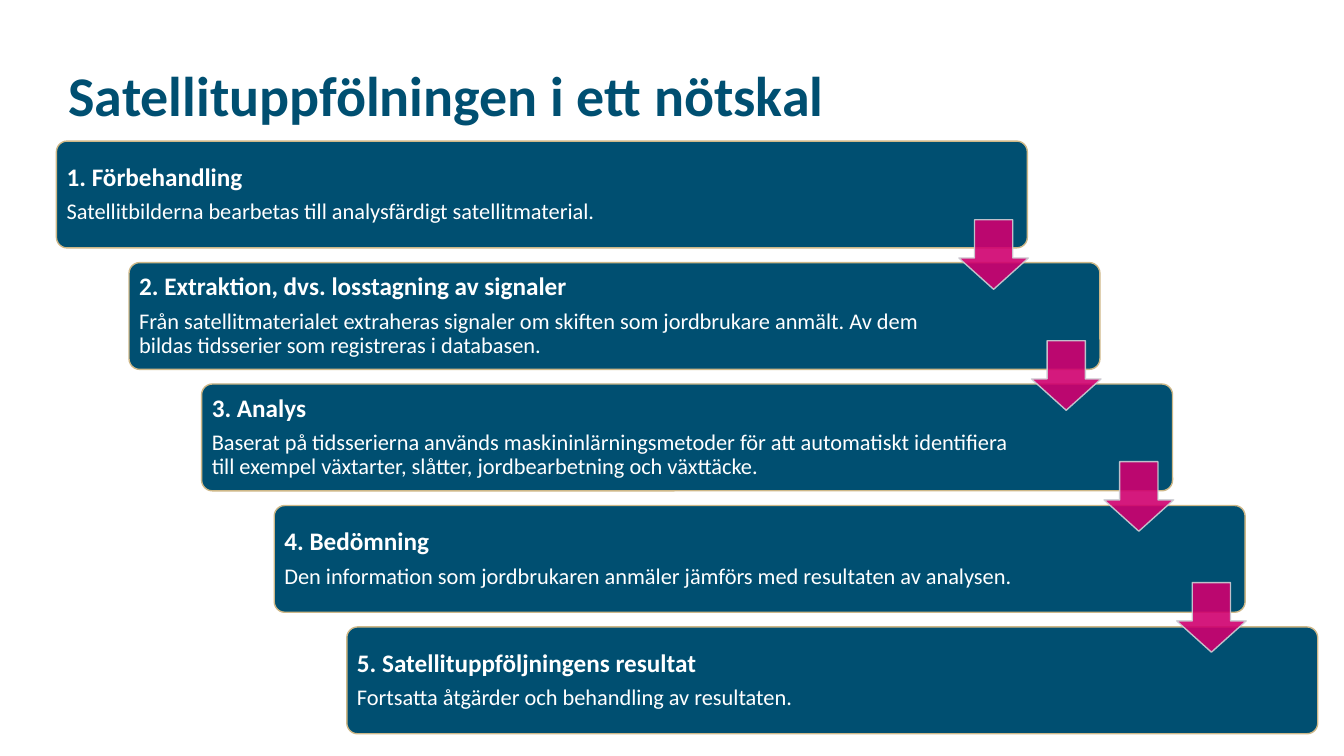
"""Build the slide with the five descending steps of satellite monitoring."""
import pptx
import pptx.dml.color
import pptx.enum.shapes
import pptx.enum.text
import pptx.oxml.ns
import pptx.util
from lxml import etree

EMU_PER_PX = 9144
FONT = "Calibri"
TEAL = pptx.dml.color.RGBColor(0x00, 0x4F, 0x71)
GOLD = pptx.dml.color.RGBColor(0xCE, 0xB8, 0x88)
MAGENTA = pptx.dml.color.RGBColor(0xD0, 0x00, 0x6F)
SILVER = pptx.dml.color.RGBColor(0xCC, 0xD0, 0xD5)
WHITE = pptx.dml.color.RGBColor(0xFF, 0xFF, 0xFF)

STEP_LEFT, STEP_TOP, STEP_WIDTH, STEP_HEIGHT = 56, 140, 963, 106
ARROW_LEFT, ARROW_TOP, ARROW_SIZE = 951, 218, 69
SHIFT_RIGHT = 72
STEP_PITCH, ARROW_PITCH = 120.5, 120

STEPS = [
    ("1. Förbehandling",
     "Satellitbilderna bearbetas till analysfärdigt satellitmaterial."),
    ("2. Extraktion, dvs. losstagning av signaler",
     "Från satellitmaterialet extraheras signaler om skiften som jordbrukare anmält. "
     "Av dem bildas tidsserier som registreras i databasen."),
    ("3. Analys",
     "Baserat på tidsserierna används maskininlärningsmetoder för att automatiskt "
     "identifiera till exempel växtarter, slåtter, jordbearbetning och växttäcke."),
    ("4. Bedömning",
     "Den information som jordbrukaren anmäler jämförs med resultaten av analysen."),
    ("5. Satellituppföljningens resultat",
     "Fortsatta åtgärder och behandling av resultaten."),
]


def px(length):
    """Turn pixels into EMU."""
    return pptx.util.Emu(round(length * EMU_PER_PX))


def set_font(paragraph, size, color, bold):
    """Format a whole paragraph."""
    paragraph.font.name = FONT
    paragraph.font.size = pptx.util.Pt(size)
    paragraph.font.bold = bold
    paragraph.font.color.rgb = color


def set_opacity(color_format, percent):
    """Make a solid fill partly transparent."""
    color = color_format._xPr.find(".//" + pptx.oxml.ns.qn("a:srgbClr"))
    etree.SubElement(color, pptx.oxml.ns.qn("a:alpha"), val=str(percent * 1000))


def add_outlined(slide, kind, box, fill, line, adjustments):
    """Add a filled preset shape with a thin outline."""
    shape = slide.shapes.add_shape(kind, *map(px, box))
    shape.shadow.inherit = False
    for index, value in enumerate(adjustments):
        shape.adjustments[index] = value
    shape.fill.solid()
    shape.fill.fore_color.rgb = fill
    shape.line.color.rgb = line
    shape.line.width = pptx.util.Pt(1)
    return shape


def add_title(slide, text):
    """Place and format the title."""
    title = slide.shapes.title
    title.left, title.top, title.width, title.height = map(px, (58, 40, 1067, 117))
    frame = title.text_frame
    frame.text = text
    frame.word_wrap = True
    frame.vertical_anchor = pptx.enum.text.MSO_ANCHOR.MIDDLE
    heading = frame.paragraphs[0]
    heading.alignment = pptx.enum.text.PP_ALIGN.LEFT
    heading.line_spacing = pptx.util.Pt(40)
    set_font(heading, 40, TEAL, True)


def add_step(slide, index, heading_text, detail_text):
    """Add one step with its heading and explanation."""
    box = (STEP_LEFT + index * SHIFT_RIGHT, STEP_TOP + index * STEP_PITCH,
           STEP_WIDTH, STEP_HEIGHT)
    step = add_outlined(slide, pptx.enum.shapes.MSO_SHAPE.ROUNDED_RECTANGLE,
                        box, TEAL, GOLD, [0.1])
    frame = step.text_frame
    frame.word_wrap = True
    frame.vertical_anchor = pptx.enum.text.MSO_ANCHOR.MIDDLE
    frame.margin_left = frame.margin_top = frame.margin_bottom = px(7)
    frame.margin_right = px(147)
    heading, detail = frame.paragraphs[0], frame.add_paragraph()
    heading.text, detail.text = heading_text, detail_text
    for paragraph in (heading, detail):
        paragraph.alignment = pptx.enum.text.PP_ALIGN.LEFT
        paragraph.line_spacing = 0.9
    heading.space_after = pptx.util.Pt(6.3)
    set_font(heading, 18, WHITE, True)
    set_font(detail, 16, WHITE, False)


def add_step_arrow(slide, index):
    """Add the arrow that leads from one step to the next."""
    box = (ARROW_LEFT + index * SHIFT_RIGHT, ARROW_TOP + index * ARROW_PITCH,
           ARROW_SIZE, ARROW_SIZE)
    arrow = add_outlined(slide, pptx.enum.shapes.MSO_SHAPE.DOWN_ARROW,
                         box, MAGENTA, SILVER, [0.55, 0.45])
    fill_color = arrow._element.spPr.find(
        pptx.oxml.ns.qn("a:solidFill") + "/" + pptx.oxml.ns.qn("a:srgbClr"))
    line_color = arrow._element.spPr.find(
        pptx.oxml.ns.qn("a:ln") + "//" + pptx.oxml.ns.qn("a:srgbClr"))
    for color in (fill_color, line_color):
        etree.SubElement(color, pptx.oxml.ns.qn("a:alpha"), val="90000")


def main():
    """Build and save the slide."""
    presentation = pptx.Presentation()
    presentation.slide_width, presentation.slide_height = px(1333), px(750)
    slide = presentation.slides.add_slide(presentation.slide_layouts[5])
    for index, (heading, detail) in enumerate(STEPS):
        add_step(slide, index, heading, detail)
    for index in range(len(STEPS) - 1):
        add_step_arrow(slide, index)
    add_title(slide, "Satellituppfölningen i ett nötskal")
    presentation.save("out.pptx")


if __name__ == "__main__":
    main()
